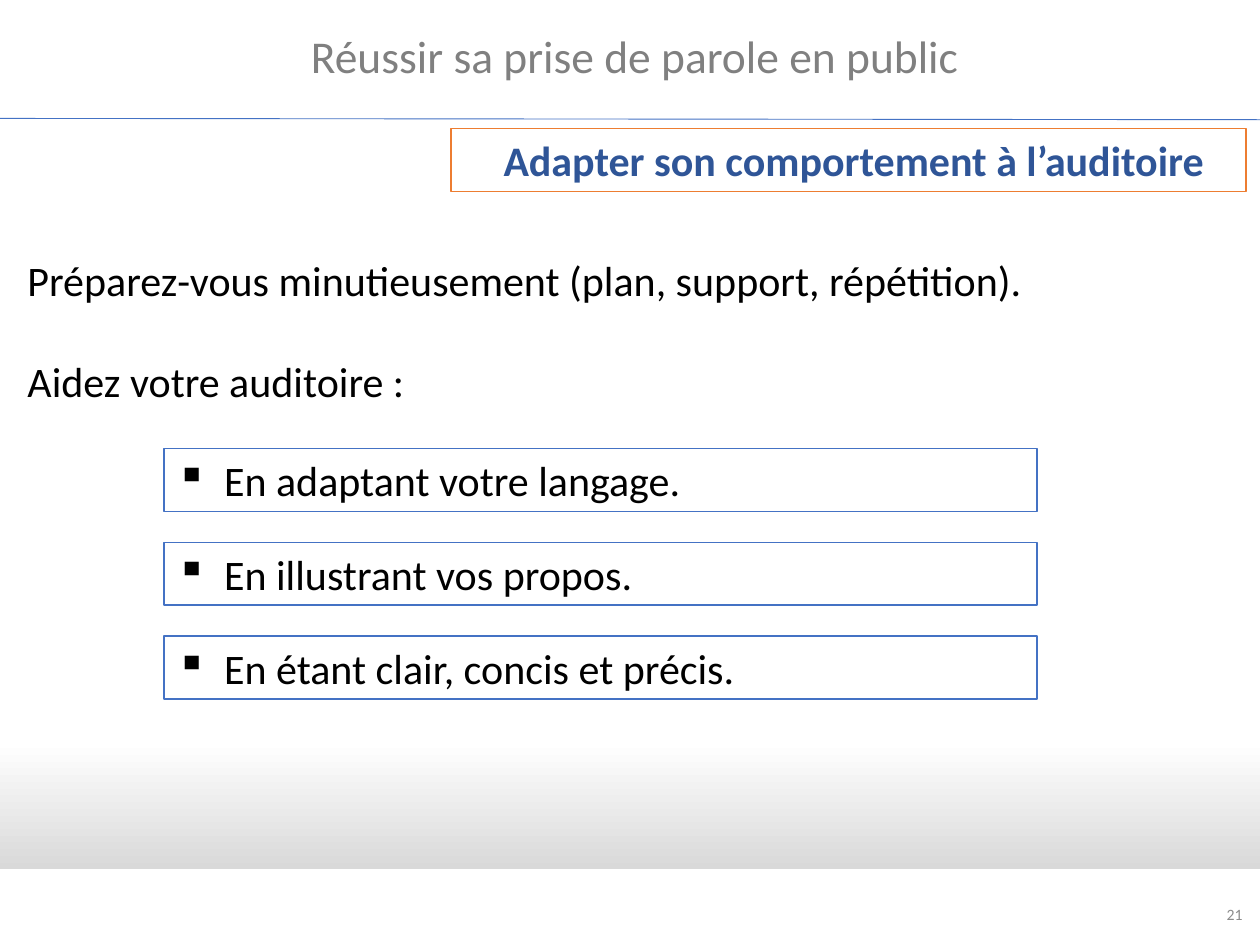
import lxml.etree
import pptx
import pptx.dml.color
import pptx.enum.shapes
import pptx.enum.text
import pptx.oxml.ns
import pptx.util

COLUMNS, ROWS = 100, 75
ALIGN = pptx.enum.text.PP_ALIGN
ANCHOR = pptx.enum.text.MSO_ANCHOR


def color(hex_string):
    return pptx.dml.color.RGBColor.from_string(hex_string)


def add_child(parent, tag, **attributes):
    return lxml.etree.SubElement(parent, pptx.oxml.ns.qn(tag), attributes)


class SlideBuilder:
    """Holds the style and the slide; places are (column, row, columns, rows)."""

    font_name = "Calibri"
    body_size = 24
    blue, orange, navy = "4472C4", "ED7D31", "2F5597"
    black, white, gray, light_gray = "000000", "FFFFFF", "808080", "8C8C8C"
    shade = "D9D9D9"
    indent = pptx.util.Inches(0.38)

    def __init__(self, presentation):
        self.slide = presentation.slides.add_slide(presentation.slide_layouts[6])
        self.column = presentation.slide_width / COLUMNS
        self.row = presentation.slide_height / ROWS

    def place(self, column, row, columns, rows):
        return (round(column * self.column), round(row * self.row),
                round(columns * self.column), round(rows * self.row))

    def rectangle(self, *place):
        shape = self.slide.shapes.add_shape(
            pptx.enum.shapes.MSO_SHAPE.RECTANGLE, *self.place(*place))
        shape.shadow.inherit = False
        return shape

    def gradient_band(self, *place):
        """Fades downwards from white to the shade."""
        shape = self.rectangle(*place)
        shape.line.fill.background()
        shape.fill.gradient()
        shape.fill.gradient_angle = 270
        stops = ((0.61, self.white), (1, self.shade))
        for stop, (position, hex_string) in zip(shape.fill.gradient_stops, stops):
            stop.position = position
            stop.color.rgb = color(hex_string)

    def line(self, column, row, columns, rows):
        left, top, width, height = self.place(column, row, columns, rows)
        connector = self.slide.shapes.add_connector(
            pptx.enum.shapes.MSO_CONNECTOR.STRAIGHT,
            left, top, left + width, top + height)
        connector.line.color.rgb = color(self.blue)
        connector.line.width = pptx.util.Pt(0.5)
        add_child(connector.element.spPr, "a:effectLst")

    def fill_text(self, shape, text, size=body_size, hex_string=black, bold=False,
                  align=ALIGN.LEFT, anchor=ANCHOR.TOP, gap=0, bullet=None):
        """Each line of the text becomes a paragraph; gap is the space between them."""
        frame = shape.text_frame
        frame.text = text
        frame.word_wrap = True
        frame.vertical_anchor = anchor
        for index, paragraph in enumerate(frame.paragraphs):
            paragraph.alignment = align
            if index:
                paragraph.space_before = pptx.util.Pt(gap)
            if bullet:
                properties = paragraph._p.get_or_add_pPr()
                properties.set("marL", str(self.indent))
                properties.set("indent", str(-self.indent))
                add_child(properties, "a:buChar", char=bullet)
            for run in paragraph.runs:
                run.font.name = self.font_name
                run.font.size = pptx.util.Pt(size)
                run.font.bold = bold
                run.font.color.rgb = color(hex_string)

    def text(self, place, text, **style):
        self.fill_text(self.slide.shapes.add_textbox(*self.place(*place)), text, **style)

    def framed_text(self, place, text, line_color, **style):
        shape = self.rectangle(*place)
        shape.fill.solid()
        shape.fill.fore_color.rgb = color(self.white)
        shape.line.color.rgb = color(line_color)
        shape.line.width = pptx.util.Pt(1)
        self.fill_text(shape, text, **style)
        return shape


def main():
    presentation = pptx.Presentation()
    presentation.slide_width = pptx.util.Inches(10)
    presentation.slide_height = pptx.util.Inches(7.5)
    builder = SlideBuilder(presentation)

    builder.gradient_band(0, 43, 100, 26)
    builder.text((0.8, 1.7, 99.2, 5.4), "Réussir sa prise de parole en public",
                 size=26, hex_string=builder.gray, align=ALIGN.CENTER)
    builder.line(0, 9.4, 100, 0.1)
    builder.text((76.3, 70.6, 23.3, 4), "21", size=9, hex_string=builder.light_gray,
                 align=ALIGN.RIGHT, anchor=ANCHOR.MIDDLE)
    builder.text((1.2, 19.7, 98, 13.1),
                 "Préparez-vous minutieusement (plan, support, répétition).\n"
                 "Aidez votre auditoire :", gap=29)

    heading = builder.framed_text(
        (35.8, 10.2, 63.1, 5), "Adapter son comportement à l’auditoire",
        builder.orange, hex_string=builder.navy, bold=True, align=ALIGN.CENTER)
    heading.text_frame.margin_left = pptx.util.Inches(0.18)

    advice = ("En adaptant votre langage.", "En illustrant vos propos.",
              "En étant clair, concis et précis.")
    for index, text in enumerate(advice):
        builder.framed_text((13, 35.6 + 7.45 * index, 69.3, 5), text,
                            builder.blue, bullet="▪")

    presentation.save("out.pptx")


if __name__ == "__main__":
    main()
